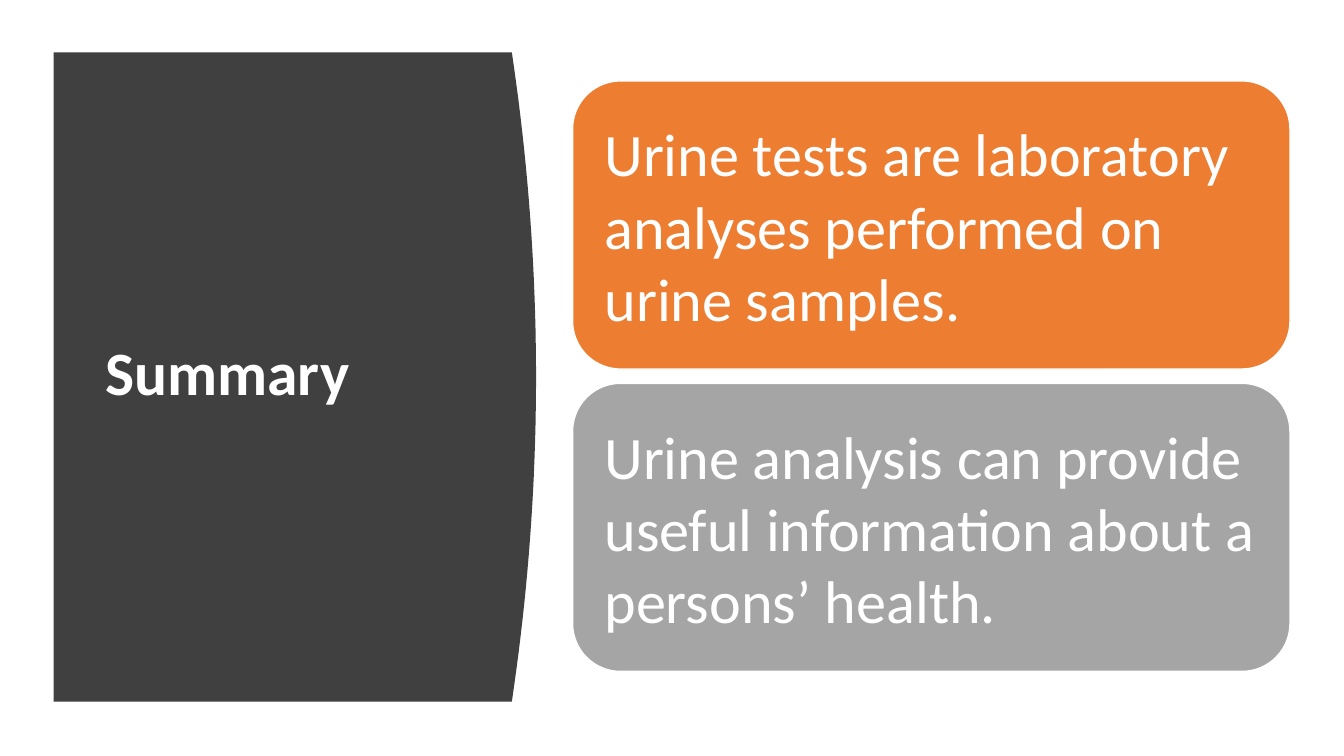
import pptx
import pptx.util
import pptx.dml.color
import pptx.enum.shapes
import pptx.enum.text

Cm = pptx.util.Cm
Pt = pptx.util.Pt

TITLE = "Summary"
CARDS = [
    ("Urine tests are laboratory analyses performed on urine samples.", "ED7D31"),
    ("Urine analysis can provide useful information about a persons’ health.", "A5A5A5"),
]
FONT = "Calibri"
WHITE = "FFFFFF"
DARK = "404040"

# Panel with a bowed right edge, in cm
PANEL_LEFT, PANEL_TOP, PANEL_HEIGHT = 1.35, 1.32, 16.36
EDGE, BULGE, STEPS = 12.9, 0.61, 40

# Stacked cards, in cm
CARD_LEFT, CARD_TOP, CARD_WIDTH, CARD_HEIGHT = 14.43, 2.04, 18.08, 7.26
CARD_GAP, CARD_INSET = 0.36, 0.45


def color(hex_color):
    return pptx.dml.color.RGBColor.from_string(hex_color)


def write(tf, text, size, bold=False, line_spacing=None, inset=None):
    tf.word_wrap = True
    tf.auto_size = pptx.enum.text.MSO_AUTO_SIZE.NONE
    tf.vertical_anchor = pptx.enum.text.MSO_ANCHOR.MIDDLE
    if inset is not None:
        tf.margin_left = tf.margin_right = Cm(inset)
        tf.margin_top = tf.margin_bottom = Cm(inset)
    p = tf.paragraphs[0]
    p.alignment = pptx.enum.text.PP_ALIGN.LEFT
    if line_spacing:
        p.line_spacing = line_spacing
    r = p.add_run()
    r.text = text
    r.font.name = FONT
    r.font.size = Pt(size)
    r.font.bold = bold
    r.font.color.rgb = color(WHITE)


def add_panel(s):
    edge = []
    for i in range(STEPS + 1):
        t = i / STEPS
        x = EDGE + BULGE * (1 - (2 * t - 1) ** 2)
        edge.append((Cm(x), Cm(PANEL_TOP + PANEL_HEIGHT * t)))
    fb = s.shapes.build_freeform(Cm(PANEL_LEFT), Cm(PANEL_TOP))
    corner = (Cm(PANEL_LEFT), Cm(PANEL_TOP + PANEL_HEIGHT))
    fb.add_line_segments(edge + [corner], close=True)
    sp = fb.convert_to_shape()
    sp.shadow.inherit = False
    sp.fill.solid()
    sp.fill.fore_color.rgb = color(DARK)
    sp.line.fill.background()
    return sp


def add_card(s, index, text, fill):
    top = CARD_TOP + index * (CARD_HEIGHT + CARD_GAP)
    sp = s.shapes.add_shape(pptx.enum.shapes.MSO_SHAPE.ROUNDED_RECTANGLE,
                            Cm(CARD_LEFT), Cm(top), Cm(CARD_WIDTH), Cm(CARD_HEIGHT))
    sp.shadow.inherit = False
    sp.fill.solid()
    sp.fill.fore_color.rgb = color(fill)
    sp.line.color.rgb = color(WHITE)
    sp.line.width = Pt(1)
    write(sp.text_frame, text, 43, inset=CARD_INSET)


def main():
    prs = pptx.Presentation()
    prs.slide_width, prs.slide_height = Cm(33.87), Cm(19.05)
    s = prs.slides.add_slide(prs.slide_layouts[5])

    panel = add_panel(s)
    title = s.shapes.title
    title.left, title.top, title.width, title.height = Cm(2.4), Cm(2.82), Cm(9.5), Cm(13.31)
    write(title.text_frame, TITLE, 44, bold=True, line_spacing=0.9)
    title.element.addprevious(panel.element)  # keep the title in front of the panel

    for i, (text, fill) in enumerate(CARDS):
        add_card(s, i, text, fill)

    prs.save("out.pptx")


if __name__ == "__main__":
    main()
